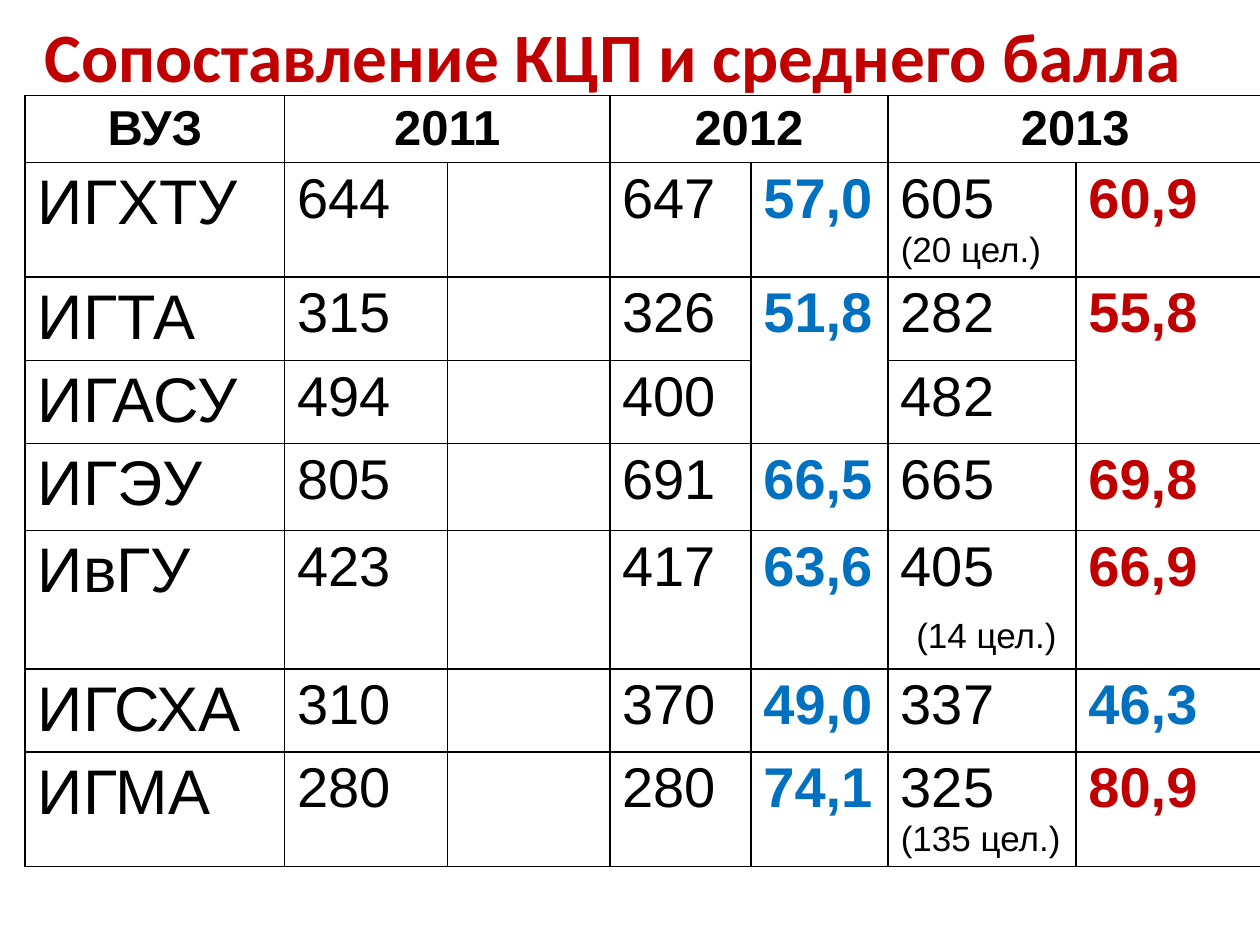
from pptx import Presentation
from pptx.dml.color import RGBColor
from pptx.enum.text import MSO_ANCHOR, MSO_AUTO_SIZE, PP_ALIGN
from pptx.oxml.ns import qn
from pptx.util import Inches, Pt
from lxml.etree import SubElement

COLORS = {"black": "000000", "white": "FFFFFF", "red": "C00000", "blue": "0070C0"}

COLUMN_WIDTHS = [2.06, 1.29, 1.29, 1.12, 1.09, 1.49, 1.48]
ROW_HEIGHTS = [0.53, 0.91, 0.66, 0.66, 0.69, 1.1, 0.66, 0.91]
YEARS = {"2011": 1, "2012": 3, "2013": 5}
SHARED_SCORE_COLUMNS = (4, 6)

# name, places in 2011, 2012, score in 2012, places in 2013, score in 2013
UNIVERSITIES = [
    ("ИГХТУ", "644", "647", "57,0", "605", "60,9"),
    ("ИГТА", "315", "326", "51,8", "282", "55,8"),
    ("ИГАСУ", "494", "400", "", "482", ""),
    ("ИГЭУ", "805", "691", "66,5", "665", "69,8"),
    ("ИвГУ", "423", "417", "63,6", "405", "66,9"),
    ("ИГСХА", "310", "370", "49,0", "337", "46,3"),
    ("ИГМА", "280", "280", "74,1", "325", "80,9"),
]
TARGET_PLACES = {"ИГХТУ": "(20 цел.)", "ИвГУ": "(14 цел.)", "ИГМА": "(135 цел.)"}
LOWERED_SCORES = {"ИГСХА"}


def write(paragraph, text, *, size=32, color="black", bold=False, font="Arial",
          align=PP_ALIGN.LEFT):
    paragraph.alignment = align
    run = paragraph.add_run()
    run.text = text
    run.font.name = font
    run.font.size = Pt(size)
    run.font.bold = bold
    run.font.color.rgb = RGBColor.from_string(COLORS[color])


class SlideBuilder:
    """Holds the slide and the style of its title and table."""

    def __init__(self, slide, border_width=1, cell_margin=0.04):
        self.slide = slide
        self.border_width = border_width
        self.cell_margin = cell_margin

    def title(self, text, left, top, width, height):
        shape = self.slide.shapes.title
        shape.left, shape.top = Inches(left), Inches(top)
        shape.width, shape.height = Inches(width), Inches(height)
        frame = shape.text_frame
        frame.word_wrap = True
        frame.auto_size = MSO_AUTO_SIZE.NONE
        frame.vertical_anchor = MSO_ANCHOR.MIDDLE
        write(frame.paragraphs[0], text, size=39.6, color="red", bold=True,
              font="Calibri", align=PP_ALIGN.CENTER)

    def table(self, left, top, widths, heights):
        table = self.slide.shapes.add_table(
            len(heights), len(widths), Inches(left), Inches(top),
            Inches(sum(widths)), Inches(sum(heights))).table
        for column, width in zip(table.columns, widths):
            column.width = Inches(width)
        for row, height in zip(table.rows, heights):
            row.height = Inches(height)
        for cell in table.iter_cells():
            self.style_cell(cell)
        return table

    def style_cell(self, cell):
        cell.margin_top = cell.margin_bottom = Inches(self.cell_margin)
        properties = cell._tc.get_or_add_tcPr()
        for side in ("a:lnL", "a:lnR", "a:lnT", "a:lnB"):
            line = SubElement(properties, qn(side), w=str(Pt(self.border_width)))
            fill = SubElement(line, qn("a:solidFill"))
            SubElement(fill, qn("a:srgbClr"), val=COLORS["black"])
        cell.fill.solid()
        cell.fill.fore_color.rgb = RGBColor.from_string(COLORS["white"])

    def cell_text(self, cell, text, **style):
        if text:
            write(cell.text_frame.paragraphs[0], text, **style)


def fill_header(builder, table):
    style = {"size": 28, "bold": True, "align": PP_ALIGN.CENTER}
    builder.cell_text(table.cell(0, 0), "ВУЗ", **style)
    for year, column in YEARS.items():
        table.cell(0, column).merge(table.cell(0, column + 1))
        builder.cell_text(table.cell(0, column), year, **style)


def fill_university(builder, table, row, university):
    name, places_2011, places_2012, score_2012, places_2013, score_2013 = university
    score_color = "blue" if name in LOWERED_SCORES else "red"
    builder.cell_text(table.cell(row, 0), name, size=36)
    for column, places in ((1, places_2011), (3, places_2012), (5, places_2013)):
        builder.cell_text(table.cell(row, column), places)
    builder.cell_text(table.cell(row, 4), score_2012, color="blue", bold=True)
    builder.cell_text(table.cell(row, 6), score_2013, color=score_color, bold=True)
    if name in TARGET_PLACES:
        paragraph = table.cell(row, 5).text_frame.add_paragraph()
        if name == "ИвГУ":
            write(paragraph, " ")
        write(paragraph, TARGET_PLACES[name], size=20)


def main():
    presentation = Presentation()
    presentation.slide_width, presentation.slide_height = Inches(10), Inches(7.5)
    slide = presentation.slides.add_slide(presentation.slide_layouts[5])
    builder = SlideBuilder(slide)
    builder.title("Сопоставление КЦП и среднего балла", 0, 0, 9.73, 0.87)

    table = builder.table(0.2, 0.76, COLUMN_WIDTHS, ROW_HEIGHTS)
    fill_header(builder, table)
    for row, university in enumerate(UNIVERSITIES, start=1):
        fill_university(builder, table, row, university)
    for column in SHARED_SCORE_COLUMNS:
        table.cell(2, column).merge(table.cell(3, column))

    presentation.save("out.pptx")


if __name__ == "__main__":
    main()
